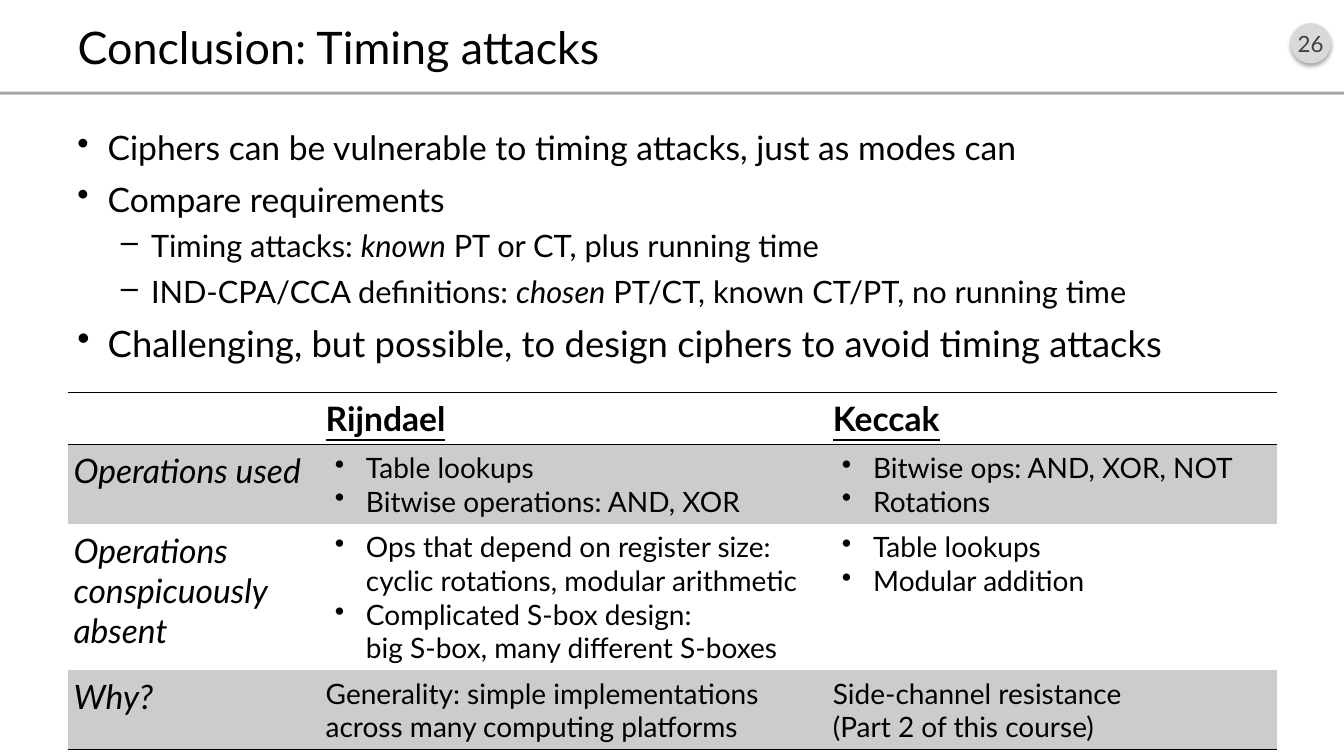
from lxml import etree
from pptx import Presentation
from pptx.dml.color import RGBColor
from pptx.enum.shapes import MSO_SHAPE
from pptx.enum.text import MSO_ANCHOR, PP_ALIGN
from pptx.oxml import parse_xml
from pptx.oxml.ns import nsdecls, qn
from pptx.util import Inches, Pt

COLORS = {
    "text": "000000",
    "number": "404040",
    "badge": "D9D9D9",
    "rule": "A6A6A6",
    "band": "CCCCCC",
}
NO_STYLE_NO_GRID = "{2D5ABB26-0587-4C30-8999-92F81FD0307C}"


def write(frame, text, first=True, size=24, color="text", bold=False, italic=False,
          underline=False, align=PP_ALIGN.LEFT, before=0, bullet=None, level=0,
          left=0.0, hanging=0.3):
    """Write one paragraph; words between asterisks become italic."""
    paragraph = frame.paragraphs[0] if first else frame.add_paragraph()
    paragraph.alignment = align
    paragraph.level = level
    paragraph.space_before = Pt(before)
    if bullet:
        properties = paragraph._p.get_or_add_pPr()
        properties.set("marL", str(Inches(left)))
        properties.set("indent", str(-Inches(hanging)))
        etree.SubElement(properties, qn("a:buChar")).set("char", bullet)
    for part_index, part in enumerate(text.split("*")):
        for line_index, line in enumerate(part.split("\n")):
            if line_index:
                paragraph.add_line_break()
            run = paragraph.add_run()
            run.text = line
            run.font.name = "Lato"
            run.font.size = Pt(size)
            run.font.bold = bold
            run.font.italic = italic or part_index % 2 == 1
            run.font.underline = underline
            run.font.color.rgb = RGBColor.from_string(COLORS[color])


def add_border(cell, side):
    """Draw a 1 pt line on the top ("T") or bottom ("B") of a cell without fill."""
    cell._tc.get_or_add_tcPr().append(parse_xml(
        f'<a:ln{side} {nsdecls("a")} w="{Pt(1)}"><a:solidFill>'
        f'<a:srgbClr val="{COLORS["text"]}"/></a:solidFill></a:ln{side}>'))


presentation = Presentation()
presentation.slide_width = Inches(13.33)
presentation.slide_height = Inches(7.5)
slide = presentation.slides.add_slide(presentation.slide_layouts[5])

# Header
rule = slide.shapes.add_shape(MSO_SHAPE.RECTANGLE, Inches(0), Inches(0.91),
                              Inches(13.33), Inches(0.03))
badge = slide.shapes.add_shape(MSO_SHAPE.OVAL, Inches(12.8), Inches(0.23),
                               Inches(0.4), Inches(0.4))
for shape, color in ((rule, "rule"), (badge, "badge")):
    shape.shadow.inherit = False
    shape.fill.solid()
    shape.fill.fore_color.rgb = RGBColor.from_string(COLORS[color])
    shape.line.fill.background()
badge._element.spPr.find(qn("a:effectLst")).append(parse_xml(
    f'<a:outerShdw {nsdecls("a")} blurRad="{Pt(3.1)}" dist="{Pt(1.8)}" dir="5400000">'
    '<a:srgbClr val="000000"><a:alpha val="35000"/></a:srgbClr></a:outerShdw>'))
badge_frame = badge.text_frame
badge_frame.margin_left = badge_frame.margin_right = 0
badge_frame.vertical_anchor = MSO_ANCHOR.MIDDLE
badge_frame.word_wrap = False
write(badge_frame, "26", size=16, color="number", align=PP_ALIGN.CENTER)

title = slide.shapes.title
title.left, title.top = Inches(0.67), Inches(0.16)
title.width, title.height = Inches(12), Inches(0.6)
title.text_frame.vertical_anchor = MSO_ANCHOR.MIDDLE
write(title.text_frame, "Conclusion: Timing attacks", size=32)

# Bullet points
main_point = {"bullet": "•", "left": 0.3, "before": 8}
sub_point = {"bullet": "–", "left": 0.73, "before": 6, "level": 1, "size": 22}
points = [
    ("Ciphers can be vulnerable to timing attacks, just as modes can", main_point),
    ("Compare requirements", main_point),
    ("Timing attacks: *known* PT or CT, plus running time", sub_point),
    ("IND-CPA/CCA definitions: *chosen* PT/CT, known CT/PT, no running time", sub_point),
    ("Challenging, but possible, to design ciphers to avoid timing attacks",
     {**main_point, "size": 26}),
]
body = slide.shapes.add_textbox(Inches(0.67), Inches(1.21), Inches(12), Inches(5.75))
body.text_frame.word_wrap = True
for index, (text, style) in enumerate(points):
    write(body.text_frame, text, first=index == 0, **style)

# Comparison table: each cell is a list of paragraphs
heading = {"bold": True, "underline": True}
label = {"italic": True}
item = {"size": 20, "bullet": "•", "left": 0.4, "hanging": 0.31, "level": 1}
plain = {"size": 20}
rows = [
    (0.51, [heading] * 3, [[], ["Rijndael"], ["Keccak"]]),
    (0.78, [label, item, item], [
        ["Operations used"],
        ["Table lookups", "Bitwise operations: AND, XOR"],
        ["Bitwise ops: AND, XOR, NOT", "Rotations"]]),
    (1.45, [label, item, item], [
        ["Operations conspicuously absent"],
        ["Ops that depend on register size:\ncyclic rotations, modular arithmetic",
         "Complicated S-box design:\nbig S-box, many different S-boxes"],
        ["Table lookups", "Modular addition"]]),
    (0.78, [label, plain, plain], [
        ["Why?"],
        ["Generality: simple implementations\nacross many computing platforms"],
        ["Side-channel resistance\n(Part 2 of this course)"]]),
]
table_shape = slide.shapes.add_table(len(rows), 3, Inches(0.67), Inches(3.89),
                                     Inches(12), Inches(3.52))
table = table_shape.table
table.first_row = table.horz_banding = False
table._tbl.tblPr.find(qn("a:tableStyleId")).text = NO_STYLE_NO_GRID
for column, width in zip(table.columns, (2.5, 5.03, 4.47)):
    column.width = Inches(width)

for row_index, (height, styles, contents) in enumerate(rows):
    table.rows[row_index].height = Inches(height)
    for column_index, (style, texts) in enumerate(zip(styles, contents)):
        cell = table.cell(row_index, column_index)
        cell.margin_left = cell.margin_right = Inches(0.06)
        cell.margin_top = cell.margin_bottom = Inches(0.06)
        if row_index == 0:
            add_border(cell, "T")
        if row_index in (0, len(rows) - 1):
            add_border(cell, "B")
        if row_index % 2:
            cell.fill.solid()
            cell.fill.fore_color.rgb = RGBColor.from_string(COLORS["band"])
        else:
            cell.fill.background()
        for index, text in enumerate(texts):
            write(cell.text_frame, text, first=index == 0, **style)

presentation.save("out.pptx")
